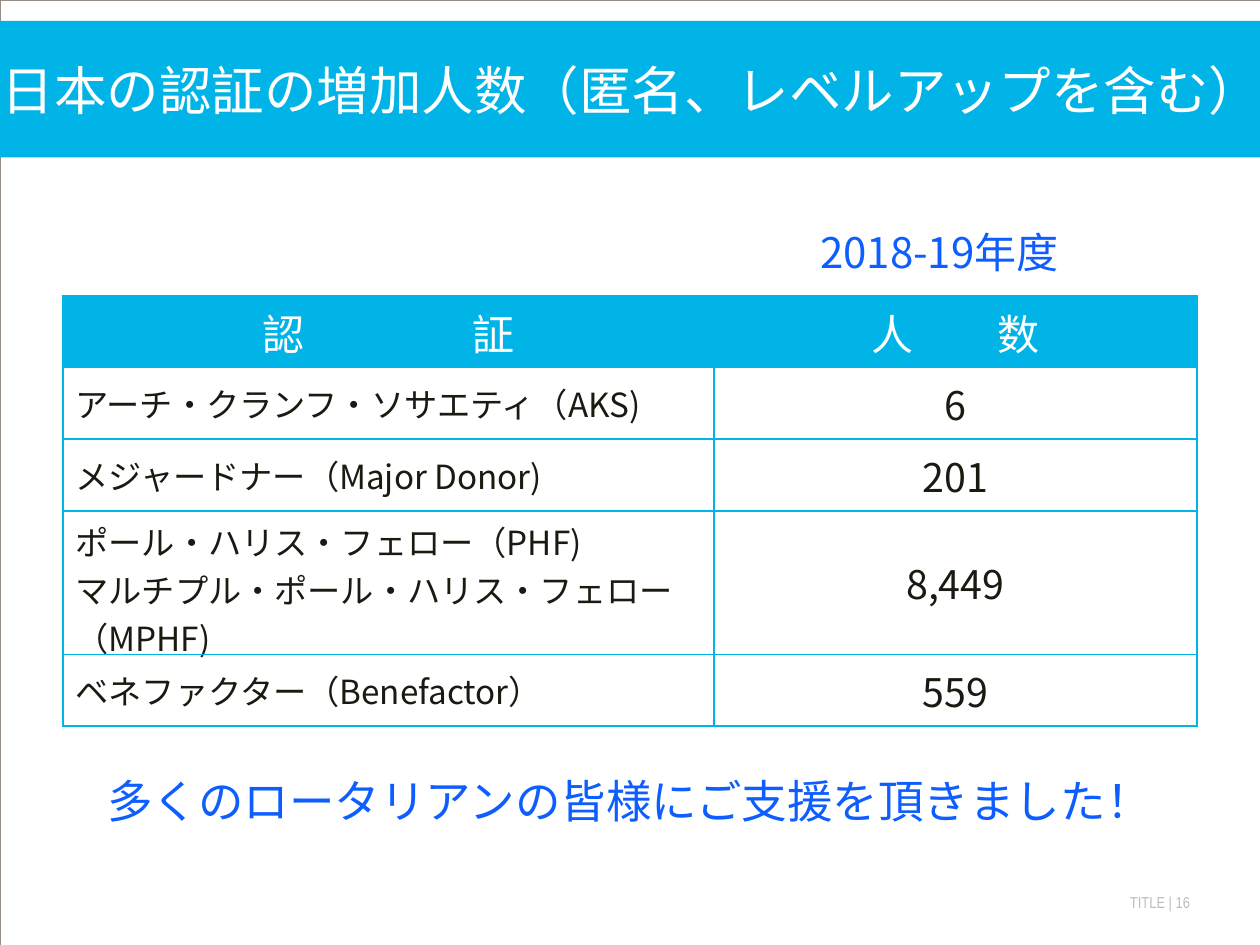
from lxml.etree import SubElement as Sub
from pptx import Presentation
from pptx.dml.color import RGBColor as Rgb
from pptx.enum.shapes import MSO_SHAPE as Kind
from pptx.enum.text import MSO_ANCHOR as Anchor, PP_ALIGN as Align
from pptx.oxml.ns import qn
from pptx.util import Pt

HUES = {"sky": "01B4E7", "blue": "0E5EFF", "ink": "1B1A11",
        "white": "FFFFFF", "gray": "BCBDC0", "edge": "958D85"}
SANS = "Noto Sans CJK JP"
HEADS = [("認", "証", 96), ("人", "数", 48)]
ROWS = [
    ("アーチ・クランフ・ソサエティ（AKS)", "6"),
    ("メジャードナー（Major Donor)", "201"),
    ("ポール・ハリス・フェロー（PHF)\nマルチプル・ポール・ハリス・フェロー（MPHF)", "8,449"),
    ("ベネファクター（Benefactor）", "559"),
]


def hue(name):
    """Return the named colour."""
    return Rgb.from_string(HUES[name])


def style(frame, size, color, align, face=SANS):
    """Format every run in a text frame."""
    for para in frame.paragraphs:
        para.alignment = align
        for run in para.runs:
            font = run.font
            font.size, font.name = Pt(size), face
            font.color.rgb = hue(color)
            Sub(font._element, qn("a:ea"), typeface=face)


def trim(frame, left=0, right=0):
    """Set the side margins and clear the others."""
    frame.margin_top = frame.margin_bottom = 0
    frame.margin_left, frame.margin_right = Pt(left), Pt(right)


def block(slide, box):
    """Add a plain rectangle."""
    shape = slide.shapes.add_shape(Kind.RECTANGLE, *map(Pt, box))
    shape.shadow.inherit = False
    return shape


def edge(slide, box):
    """Draw the hairline round the page."""
    shape = block(slide, box)
    shape.fill.background()
    shape.line.color.rgb = hue("edge")
    shape.line.width = Pt(0.13)


def banner(slide, box, text):
    """Draw the title band."""
    shape = block(slide, box)
    shape.fill.solid()
    shape.fill.fore_color.rgb = hue("sky")
    shape.line.fill.background()
    frame = shape.text_frame
    trim(frame, left=8)
    frame.vertical_anchor = Anchor.MIDDLE
    frame.text = text
    style(frame, 30, "white", Align.CENTER)


def label(slide, box, text, size, color, align, wrap=True, face=SANS):
    """Add a line of text and return its frame."""
    frame = slide.shapes.add_textbox(*map(Pt, box)).text_frame
    frame.word_wrap = wrap
    frame.text = text
    style(frame, size, color, align, face)
    return frame


def border(cell):
    """Rule all four sides of a cell."""
    props = cell._tc.get_or_add_tcPr()
    for side in ("lnL", "lnR", "lnT", "lnB"):
        line = Sub(props, qn(f"a:{side}"), w=str(Pt(1)))
        fill = Sub(line, qn("a:solidFill"))
        Sub(fill, qn("a:srgbClr"), val=HUES["sky"])


def grid(slide, box):
    """Build the table of awards and head counts."""
    left, top, wide, high = box
    table = slide.shapes.add_table(len(ROWS) + 1, 2, *map(Pt, box)).table
    table.first_row = table.horz_banding = False
    first = 372
    for col, width in zip(table.columns, (first, wide - first)):
        col.width = Pt(width)
    unit = high / (len(ROWS) + 2)
    for row in table.rows:
        row.height = Pt(unit)
    table.rows[3].height = Pt(2 * unit)
    for cell in table.iter_cells():
        border(cell)
        cell.vertical_anchor = Anchor.MIDDLE
        cell.fill.background()
    for col, (start, end, gap) in enumerate(HEADS):
        cell = table.cell(0, col)
        cell.fill.solid()
        cell.fill.fore_color.rgb = hue("sky")
        para = cell.text_frame.paragraphs[0]
        for text in (start, end):
            para.add_run().text = text
        style(cell.text_frame, 24, "white", Align.CENTER)
        para.runs[0].font._element.set("spc", str(gap * 100))
    looks = ((19, Align.LEFT), (22.5, Align.CENTER))
    for num, texts in enumerate(ROWS, 1):
        for col, (text, (size, align)) in enumerate(zip(texts, looks)):
            frame = table.cell(num, col).text_frame
            frame.text = text
            style(frame, size, "ink", align)


def main():
    """Build and save the slide."""
    deck = Presentation()
    deck.slide_width, deck.slide_height = Pt(720), Pt(540)
    slide = deck.slides.add_slide(deck.slide_layouts[6])
    edge(slide, (0, 0, 720, 540))
    foot = label(slide, (558, 510, 126, 11), "TITLE | 16", 9, "gray",
                 Align.RIGHT, face="Arial Narrow")
    trim(foot, right=4)
    banner(slide, (-12, 12, 738, 78), "日本の認証の増加人数（匿名、レベルアップを含む）")
    grid(slide, (36, 169, 648, 246))
    label(slide, (448.5, 126, 163.5, 36), "2018-19年度", 24, "blue",
          Align.RIGHT, wrap=False)
    label(slide, (36, 438, 648, 39), "多くのロータリアンの皆様にご支援を頂きました！",
          26, "blue", Align.CENTER)
    deck.save("out.pptx")


if __name__ == "__main__":
    main()
